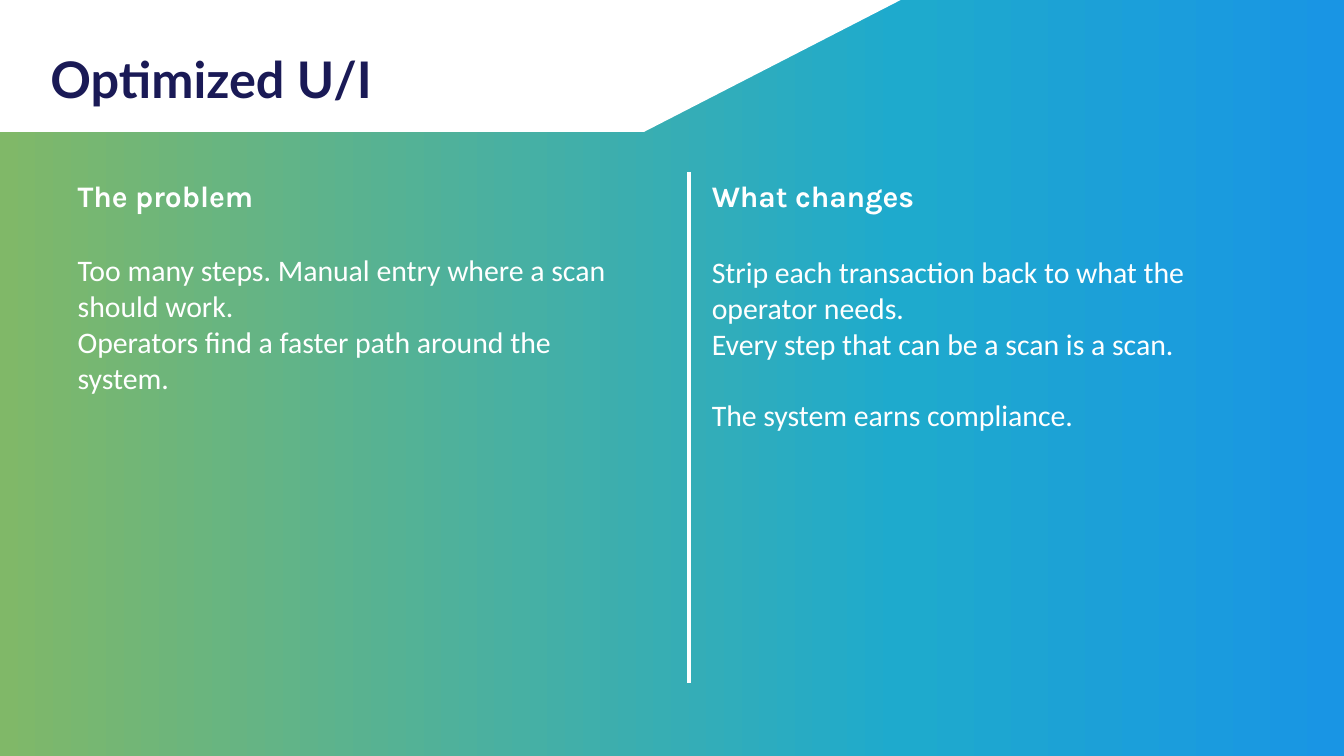
"""Build the "Optimized U/I" slide: problem and changes side by side."""
import copy

import pptx
import pptx.dml.color
import pptx.enum.shapes
import pptx.enum.text
import pptx.oxml.ns
import pptx.util
from lxml import etree

Inches = pptx.util.Inches
Pt = pptx.util.Pt
qn = pptx.oxml.ns.qn
Anchor = pptx.enum.text.MSO_ANCHOR


def color(hex_code):
    return pptx.dml.color.RGBColor.from_string(hex_code)


def fill_text(placeholder, box, anchor, lines, font_name, size, hex_code, bold):
    placeholder.left, placeholder.top, placeholder.width, placeholder.height = map(Inches, box)
    frame = placeholder.text_frame
    frame.word_wrap = True
    frame.auto_size = pptx.enum.text.MSO_AUTO_SIZE.NONE
    frame.vertical_anchor = anchor
    for index, (words, space_before) in enumerate(lines):
        paragraph = frame.add_paragraph() if index else frame.paragraphs[0]
        properties = paragraph._p.get_or_add_pPr()
        properties.set("marL", "0")
        properties.set("indent", "0")
        etree.SubElement(properties, qn("a:buNone"))
        paragraph.alignment = pptx.enum.text.PP_ALIGN.LEFT
        paragraph.space_before = Pt(space_before)
        run = paragraph.add_run()
        run.text = words
        run.font.name = font_name
        run.font.size = Pt(size)
        run.font.bold = bold
        run.font.color.rgb = color(hex_code)


WHITE = "FFFFFF"
NAVY = "1A1A56"
GRADIENT = [(0, "80B868"), (0.67, "1EAACD"), (1, "1995E4")]
COLUMN_WIDTH = 5.6

deck = pptx.Presentation()
deck.slide_width = Inches(13.33)
deck.slide_height = Inches(7.5)
slide = deck.slides.add_slide(deck.slide_layouts.get_by_name("Comparison"))

backdrop = slide.background.fill
backdrop.gradient()
backdrop.gradient_angle = 0
stop_list = next(slide.element.iter(qn("a:gsLst")))
stop_list.append(copy.deepcopy(stop_list[0]))
for stop, (position, hex_code) in zip(backdrop.gradient_stops, GRADIENT):
    stop.position = position
    stop.color.rgb = color(hex_code)

title = slide.shapes.title
fill_text(title, (0.5, 0.17, 6.14, 0.84), Anchor.TOP,
          [("Optimized U/I", 0)], "Lato", 36, NAVY, True)
title.text_frame.paragraphs[0].line_spacing = Pt(65.3)
title.text_frame.margin_left = title.text_frame.margin_right = 0
title.text_frame.margin_top = title.text_frame.margin_bottom = 0

title_band = slide.shapes.add_shape(
    pptx.enum.shapes.MSO_SHAPE.FLOWCHART_DATA,
    Inches(-5.75), Inches(-0.25), Inches(15.17), Inches(1.56))
title_band.shadow.inherit = False
title_band.fill.solid()
title_band.fill.fore_color.rgb = color(WHITE)
title_band.line.fill.background()
title.element.addprevious(title_band.element)

columns = [
    (1, 0.67, 2.45, "The problem", [
        ("Too many steps. Manual entry where a scan should work.", 0),
        ("Operators find a faster path around the system.", 0),
    ]),
    (3, 6.96, 2.47, "What changes", [
        ("Strip each transaction back to what the operator needs.", 0),
        ("Every step that can be a scan is a scan.", 0),
        ("The system earns compliance.", 25.5),
    ]),
]
placeholders = {item.placeholder_format.idx: item for item in slide.placeholders}
for heading_idx, left, body_top, heading, body in columns:
    fill_text(placeholders[heading_idx], (left, 1.54, COLUMN_WIDTH, 0.8), Anchor.MIDDLE,
              [(heading, 0)], "Karla", 21.3, WHITE, True)
    fill_text(placeholders[heading_idx + 1], (left, body_top, COLUMN_WIDTH, 4.27), Anchor.TOP,
              body, "Calibri", 21.3, WHITE, False)

divider = slide.shapes.add_connector(
    pptx.enum.shapes.MSO_CONNECTOR.STRAIGHT,
    Inches(6.83), Inches(1.71), Inches(6.83), Inches(6.78))
divider.line.color.rgb = color(WHITE)
divider.line.width = Pt(3)
etree.SubElement(divider.element.spPr, qn("a:effectLst"))

deck.save("out.pptx")
